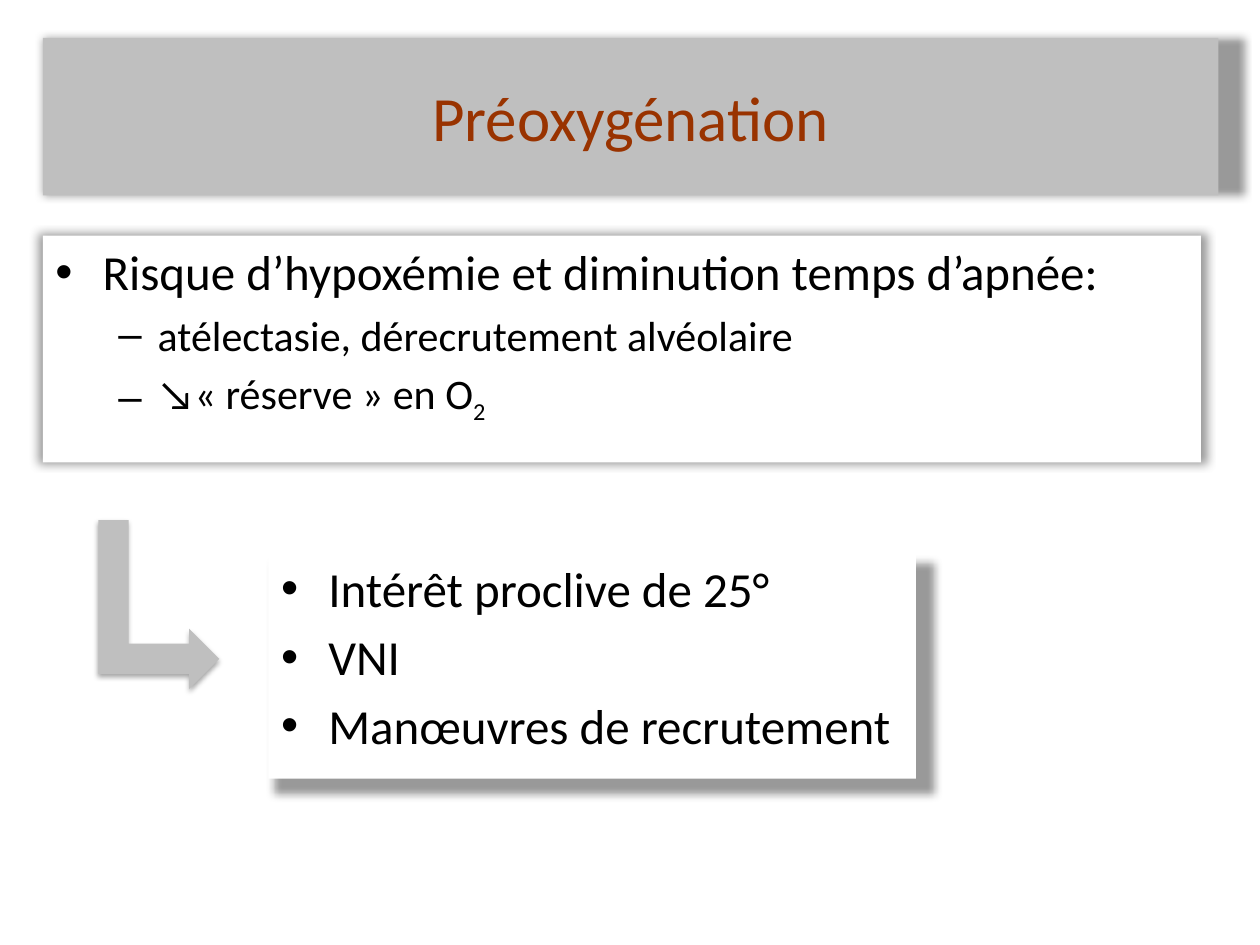
from dataclasses import dataclass

from lxml import etree
from pptx import Presentation
from pptx.dml.color import RGBColor
from pptx.enum.shapes import MSO_SHAPE
from pptx.enum.text import MSO_ANCHOR, MSO_AUTO_SIZE, PP_ALIGN
from pptx.oxml.ns import qn
from pptx.util import Pt

ARROW = MSO_SHAPE.BENT_UP_ARROW
MIDDLE, TOP = MSO_ANCHOR.MIDDLE, MSO_ANCHOR.TOP
CENTER, LEFT = PP_ALIGN.CENTER, PP_ALIGN.LEFT
NO_FIT = MSO_AUTO_SIZE.NONE


@dataclass(frozen=True)
class Theme:
    font: str = "Calibri"
    bullet_font: str = "Arial"
    title_size: int = 36
    level_sizes: tuple = (28, 24)
    title: RGBColor = RGBColor(0x99, 0x33, 0x00)
    text: RGBColor = RGBColor(0, 0, 0)
    grey: RGBColor = RGBColor(0xBF, 0xBF, 0xBF)
    white: RGBColor = RGBColor(0xFF, 0xFF, 0xFF)


THEME = Theme()
# Bullet, left margin and hanging indent of each list level
BULLETS = (("•", 27, 27), ("–", 58.5, 22.5))


def add_sub(parent, tag, **attrs):
    return etree.SubElement(parent, qn(tag), {k: str(v) for k, v in attrs.items()})


def set_shadow(sp, opacity, **attrs):
    sp.shadow.inherit = False
    effects = sp._element.spPr.find(qn("a:effectLst"))
    shadow = add_sub(effects, "a:outerShdw", rotWithShape=0, **attrs)
    color = add_sub(shadow, "a:srgbClr", val="000000")
    add_sub(color, "a:alpha", val=opacity * 1000)


def place(sp, left, top, width, height):
    sp.left, sp.top, sp.width, sp.height = map(Pt, (left, top, width, height))


def style_panel(sp, fill, **scale):
    """Solid panel with a soft shadow, slightly larger than the panel."""
    sp.fill.solid()
    sp.fill.fore_color.rgb = fill
    set_shadow(sp, 40, blurRad=Pt(5), **scale)


def style_run(r, size, color):
    r.font.name = THEME.font
    r.font.size = Pt(size)
    r.font.color.rgb = color


def style_bullet(p, level):
    char, margin, hanging = BULLETS[level]
    p.level = level
    p.alignment = LEFT
    pPr = p._p.get_or_add_pPr()
    pPr.set("marL", str(Pt(margin)))
    pPr.set("indent", str(-Pt(hanging)))
    add_sub(add_sub(pPr, "a:spcBef"), "a:spcPct", val=20000)
    add_sub(pPr, "a:buFont", typeface=THEME.bullet_font)
    add_sub(pPr, "a:buChar", char=char)


def fill_list(tf, items):
    """Items are (level, text, optional subscript)."""
    tf.word_wrap = True
    tf.auto_size = NO_FIT
    tf.vertical_anchor = TOP
    for i, (level, text, *subscript) in enumerate(items):
        p = tf.paragraphs[0] if i == 0 else tf.add_paragraph()
        p.text = text
        style_bullet(p, level)
        for sub in subscript:
            r = p.add_run()
            r.text = sub
            r.font._element.set("baseline", "-25000")
        for r in p.runs:
            style_run(r, THEME.level_sizes[level], THEME.text)


def add_title(s, text):
    sp = s.shapes.title
    place(sp, 24.5, 21.6, 671.8, 90)
    style_panel(sp, THEME.grey, sx=102000, algn="l")
    tf = sp.text_frame
    tf.text = text
    tf.vertical_anchor = MIDDLE
    p = tf.paragraphs[0]
    p.alignment = CENTER
    style_run(p.runs[0], THEME.title_size, THEME.title)


def add_arrow(s):
    sp = s.shapes.add_shape(ARROW, Pt(42.5), Pt(311), Pt(96.5), Pt(69.1))
    sp.rotation = 90
    sp.fill.solid()
    sp.fill.fore_color.rgb = THEME.grey
    sp.line.fill.background()
    set_shadow(sp, 35, blurRad=Pt(3.1), dist=Pt(1.8), dir=90 * 60000)


def main():
    prs = Presentation()
    prs.slide_width, prs.slide_height = Pt(720), Pt(540)
    s = prs.slides.add_slide(prs.slide_layouts[1])

    # Heading
    add_title(s, "Préoxygénation")

    # Measures
    measures = s.placeholders[1]
    place(measures, 153.4, 315.4, 370, 129.6)
    style_panel(measures, THEME.white, sx=102000, sy=102000, algn="tl")
    fill_list(measures.text_frame, [
        (0, "Intérêt proclive de 25°"),
        (0, "VNI"),
        (0, "Manœuvres de recrutement"),
    ])

    # Risks
    risks = s.shapes.add_textbox(Pt(24.5), Pt(134.7), Pt(661.7), Pt(129.6))
    style_panel(risks, THEME.white, sx=101000, sy=101000, algn="ctr")
    fill_list(risks.text_frame, [
        (0, "Risque d’hypoxémie et diminution temps d’apnée:"),
        (1, "atélectasie, dérecrutement alvéolaire"),
        (1, "↘« réserve » en O", "2"),
    ])

    # Arrow from risks to measures
    add_arrow(s)

    prs.save("out.pptx")


if __name__ == "__main__":
    main()
